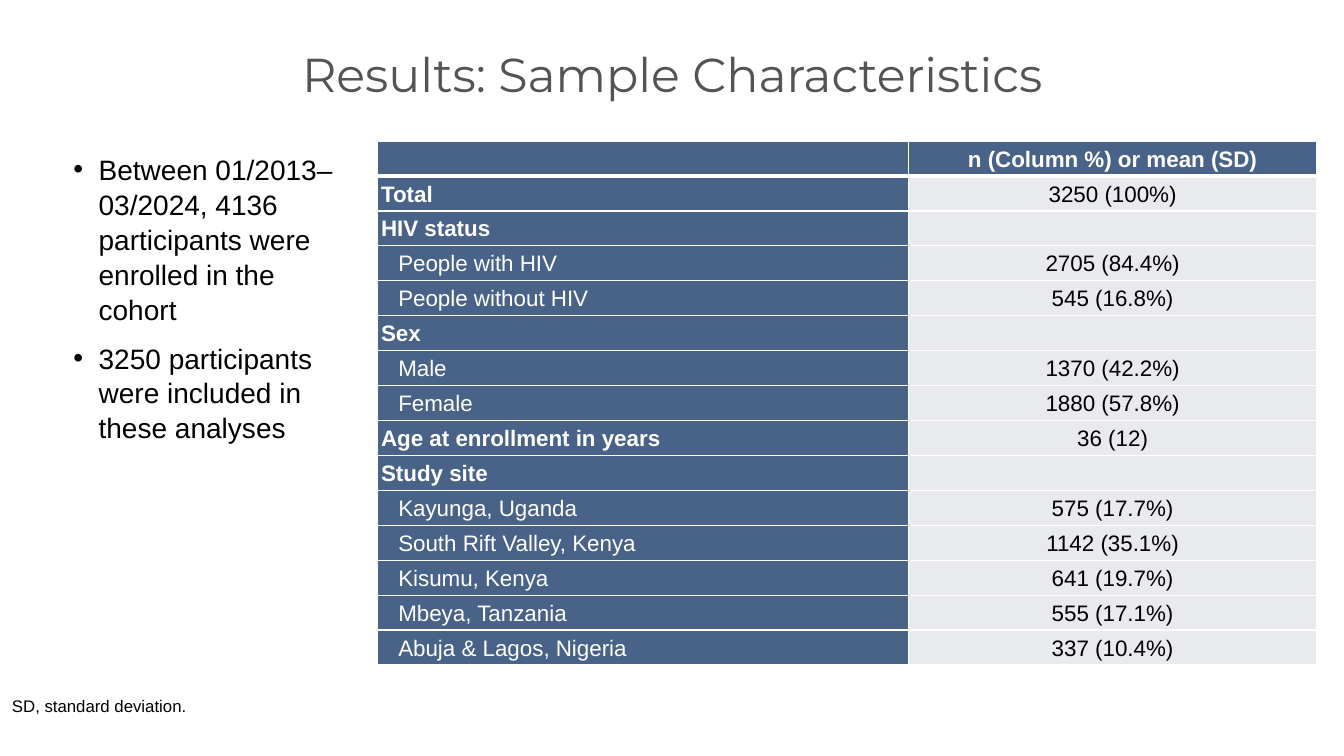
from lxml import etree
from pptx import Presentation
from pptx import util as u
from pptx.dml.color import RGBColor
from pptx.enum import text
from pptx.oxml import ns

NAVY, PALE, WHITE, BLACK = "496388", "E9EAED", "FFFFFF", "000000"


def color(value):
    return RGBColor.from_string(value)


def add_span(para, words, size, ink, font="Arial", bold=False):
    span = para.add_run()
    span.text = words
    span.font.size = u.Pt(size)
    span.font.name = font
    span.font.bold = bold
    span.font.color.rgb = color(ink)


deck = Presentation()
deck.slide_width = u.Inches(13.33)
deck.slide_height = u.Inches(7.5)
page = deck.slides.add_slide(deck.slide_layouts[6])

title = page.shapes.add_textbox(u.Inches(0.92), u.Inches(0), u.Inches(11.5), u.Inches(1.45)).text_frame
title.word_wrap = True
title.vertical_anchor = text.MSO_ANCHOR.MIDDLE
title.paragraphs[0].alignment = text.PP_ALIGN.CENTER
add_span(title.paragraphs[0], "Results: Sample Characteristics", 34, "545454", "Montserrat")

summary = page.shapes.add_textbox(u.Inches(0.63), u.Inches(1.45), u.Inches(2.91), u.Inches(4.17)).text_frame
summary.word_wrap = True
points = [
    "Between 01/2013–03/2024, 4136 participants were enrolled in the cohort",
    "3250 participants were included in these analyses",
]
for index, point in enumerate(points):
    para = summary.paragraphs[0] if index == 0 else summary.add_paragraph()
    para.line_spacing = 1.04
    if index:
        para.space_before = u.Pt(10)
    properties = para._p.get_or_add_pPr()
    properties.set("marL", str(u.Inches(0.25)))
    properties.set("indent", str(-u.Inches(0.25)))
    etree.SubElement(properties, ns.qn("a:buFont"), typeface="Arial")
    etree.SubElement(properties, ns.qn("a:buChar"), char="•")
    add_span(para, point, 20, BLACK)

HEADING, ITEM = 0.04, 0.21
rows = [
    (HEADING, "", "n (Column %) or mean (SD)"),
    (HEADING, "Total", "3250 (100%)"),
    (HEADING, "HIV status", ""),
    (ITEM, "People with HIV", "2705 (84.4%)"),
    (ITEM, "People without HIV", "545 (16.8%)"),
    (HEADING, "Sex", ""),
    (ITEM, "Male", "1370 (42.2%)"),
    (ITEM, "Female", "1880 (57.8%)"),
    (HEADING, "Age at enrollment in years", "36 (12)"),
    (HEADING, "Study site", ""),
    (ITEM, "Kayunga, Uganda", "575 (17.7%)"),
    (ITEM, "South Rift Valley, Kenya", "1142 (35.1%)"),
    (ITEM, "Kisumu, Kenya", "641 (19.7%)"),
    (ITEM, "Mbeya, Tanzania", "555 (17.1%)"),
    (ITEM, "Abuja & Lagos, Nigeria", "337 (10.4%)"),
]
table = page.shapes.add_table(
    len(rows), 2, u.Inches(3.74), u.Inches(1.4), u.Inches(9.32), u.Inches(5.2)
).table
table.columns[0].width = u.Inches(5.27)
table.columns[1].width = u.Inches(4.05)

for r, (inset, label, value) in enumerate(rows):
    table.rows[r].height = u.Inches(5.2 / len(rows))
    for c, words in enumerate((label, value)):
        cell = table.cell(r, c)
        is_dark = r == 0 or c == 0
        cell.vertical_anchor = text.MSO_ANCHOR.MIDDLE
        cell.margin_left = u.Inches(0.12 if c else inset)
        cell.margin_right = u.Inches(0.12)
        cell.margin_top = cell.margin_bottom = u.Inches(0.03)

        para = cell.text_frame.paragraphs[0]
        para.line_spacing = 1.07
        para.alignment = text.PP_ALIGN.CENTER if c else text.PP_ALIGN.LEFT
        if words:
            is_bold = r == 0 or (c == 0 and inset == HEADING)
            add_span(para, words, 16, WHITE if is_dark else BLACK, bold=is_bold)
        else:
            etree.SubElement(para._p, ns.qn("a:endParaRPr"), sz="1600")

        properties = cell._tc.get_or_add_tcPr()
        for side in "LRTB":
            is_thick = (r == 0 and side == "B") or (r == 1 and side == "T")
            width = u.Pt(3 if is_thick else 1)
            line = etree.SubElement(properties, ns.qn(f"a:ln{side}"), w=str(width))
            fill = etree.SubElement(line, ns.qn("a:solidFill"))
            etree.SubElement(fill, ns.qn("a:srgbClr"), val=WHITE)
        cell.fill.solid()
        cell.fill.fore_color.rgb = color(NAVY if is_dark else PALE)

note = page.shapes.add_textbox(u.Inches(0.02), u.Inches(6.85), u.Inches(7.45), u.Inches(0.3)).text_frame
note.word_wrap = True
add_span(note.paragraphs[0], "SD, standard deviation.", 12, BLACK)

deck.save("out.pptx")
